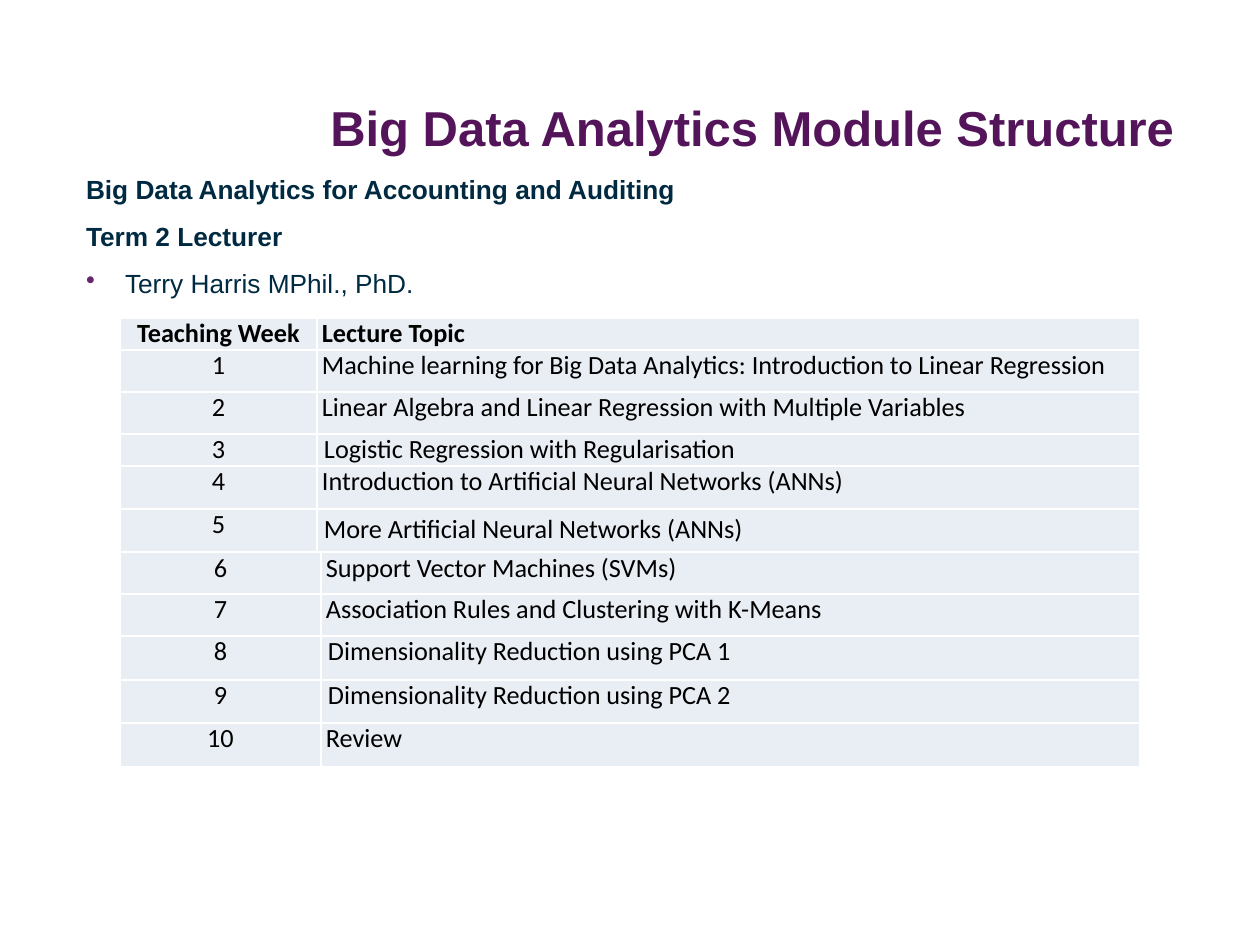
from dataclasses import dataclass

from lxml.etree import SubElement
from pptx import Presentation
from pptx.dml.color import RGBColor
from pptx.enum.text import MSO_ANCHOR, PP_ALIGN
from pptx.oxml import parse_xml
from pptx.oxml.ns import nsdecls, qn
from pptx.util import Pt

EMU_PER_PX = 914400 / 126
COLORS = {
    "title": "54145A",
    "body": "002A41",
    "bullet": "68246D",
    "cell_text": "000000",
    "cell": "E9EDF4",
    "border": "FFFFFF",
}
BULLET_INDENT = 39


def px(length: int) -> int:
    return round(length * EMU_PER_PX)


@dataclass
class Line:
    text: str
    font: str
    size: int
    color: str
    bold: bool = False
    bullet: bool = False
    align: PP_ALIGN = PP_ALIGN.LEFT
    space_before: int = 0
    space_after: int = 0
    line_spacing: float = 1.0


@dataclass
class Week:
    label: str
    topic: str
    height: int
    bold: bool = False
    margin: int = 5
    space_after: int = 0
    line_spacing: float = 1.0


@dataclass
class Schedule:
    top: int
    columns: tuple[int, int]
    weeks: list[Week]


BODY_LINES = [
    Line("Big Data Analytics\u00a0for Accounting and Auditing".replace("\u00a0", " "),
         "Arial", 15, "body", bold=True),
    Line("Term 2 Lecturer", "Arial", 15, "body", bold=True, space_before=9),
    Line("Terry Harris MPhil., PhD.", "Arial", 15, "body", bullet=True, space_before=9),
][0:3]

SCHEDULES = [
    Schedule(318, (197, 823), [
        Week("Teaching Week", "Lecture Topic", 32, bold=True),
        Week("1", "Machine learning for Big Data Analytics: Introduction to Linear Regression", 42),
        Week("2", "Linear Algebra and Linear Regression with Multiple Variables", 42),
        Week("3", "Logistic Regression with Regularisation", 32, margin=7, space_after=1),
        Week("4", "Introduction to Artificial Neural Networks (ANNs)", 43),
        Week("5", "More Artificial Neural Networks (ANNs)", 43, margin=7,
             space_after=10, line_spacing=1.15),
    ]),
    Schedule(552, (201, 819), [
        Week("6", "Support Vector Machines (SVMs)", 42),
        Week("7", "Association Rules and Clustering with K-Means", 42),
        Week("8", "Dimensionality Reduction using PCA 1", 44, margin=7, space_after=1),
        Week("9", "Dimensionality Reduction using PCA 2", 43, margin=7, space_after=1),
        Week("10", "Review", 44),
    ]),
]


def add_bullet(paragraph) -> None:
    properties = paragraph._p.get_or_add_pPr()
    properties.set("marL", str(px(BULLET_INDENT)))
    properties.set("indent", str(-px(BULLET_INDENT)))
    color = SubElement(properties, qn("a:buClr"))
    SubElement(color, qn("a:srgbClr"), val=COLORS["bullet"])
    SubElement(properties, qn("a:buChar"), char="•")


def write_line(paragraph, line: Line) -> None:
    if line.bullet:
        add_bullet(paragraph)
    paragraph_format = {
        "alignment": line.align,
        "space_before": Pt(line.space_before),
        "space_after": Pt(line.space_after),
        "line_spacing": line.line_spacing,
    }
    for name, value in paragraph_format.items():
        setattr(paragraph, name, value)
    run = paragraph.add_run()
    run.text = line.text
    font_format = {"name": line.font, "size": Pt(line.size), "bold": line.bold}
    for name, value in font_format.items():
        setattr(run.font, name, value)
    run.font.color.rgb = RGBColor.from_string(COLORS[line.color])


def add_text(slide, left: int, top: int, width: int, height: int, lines: list[Line]) -> None:
    shape = slide.shapes.add_textbox(px(left), px(top), px(width), px(height))
    frame = shape.text_frame
    frame_format = {
        "word_wrap": True, "vertical_anchor": MSO_ANCHOR.TOP,
        "margin_left": 0, "margin_right": 0, "margin_top": 0, "margin_bottom": 0,
    }
    for name, value in frame_format.items():
        setattr(frame, name, value)
    for index, line in enumerate(lines):
        paragraph = frame.add_paragraph() if index else frame.paragraphs[0]
        write_line(paragraph, line)


def fill_cell(cell, line: Line, margin: int) -> None:
    cell_format = {
        "margin_left": px(margin), "margin_right": px(margin),
        "margin_top": 0, "margin_bottom": 0, "vertical_anchor": MSO_ANCHOR.TOP,
    }
    for name, value in cell_format.items():
        setattr(cell, name, value)
    cell.fill.solid()
    cell.fill.fore_color.rgb = RGBColor.from_string(COLORS["cell"])
    properties = cell._tc.get_or_add_tcPr()
    for index, side in enumerate(("lnL", "lnR", "lnT", "lnB")):
        properties.insert(index, parse_xml(
            f'<a:{side} {nsdecls("a")} w="{Pt(1)}"><a:solidFill>'
            f'<a:srgbClr val="{COLORS["border"]}"/></a:solidFill></a:{side}>'))
    write_line(cell.text_frame.paragraphs[0], line)


def add_schedule(slide, schedule: Schedule) -> None:
    weeks = schedule.weeks
    height = sum(week.height for week in weeks)
    table = slide.shapes.add_table(
        len(weeks), 2, px(120), px(schedule.top), px(sum(schedule.columns)), px(height)).table
    table.first_row = False
    table.horz_banding = False
    for column, width in zip(table.columns, schedule.columns):
        column.width = px(width)
    for index, week in enumerate(weeks):
        table.rows[index].height = px(week.height)
        label = Line(week.label, "Calibri", 15, "cell_text", week.bold, align=PP_ALIGN.CENTER)
        topic = Line(week.topic, "Calibri", 15, "cell_text", week.bold,
                     space_after=week.space_after, line_spacing=week.line_spacing)
        fill_cell(table.cell(index, 0), label, 5)
        fill_cell(table.cell(index, 1), topic, week.margin)


def main() -> None:
    presentation = Presentation()
    presentation.slide_width = px(1260)
    presentation.slide_height = px(945)
    slide = presentation.slides.add_slide(presentation.slide_layouts[6])
    title = Line("Big Data Analytics Module Structure", "Arial", 28, "title",
                 bold=True, align=PP_ALIGN.RIGHT)
    add_text(slide, 86, 98, 1088, 74, [title])
    add_text(slide, 86, 173, 1088, 421, BODY_LINES)
    for schedule in SCHEDULES:
        add_schedule(slide, schedule)
    presentation.save("out.pptx")


if __name__ == "__main__":
    main()
